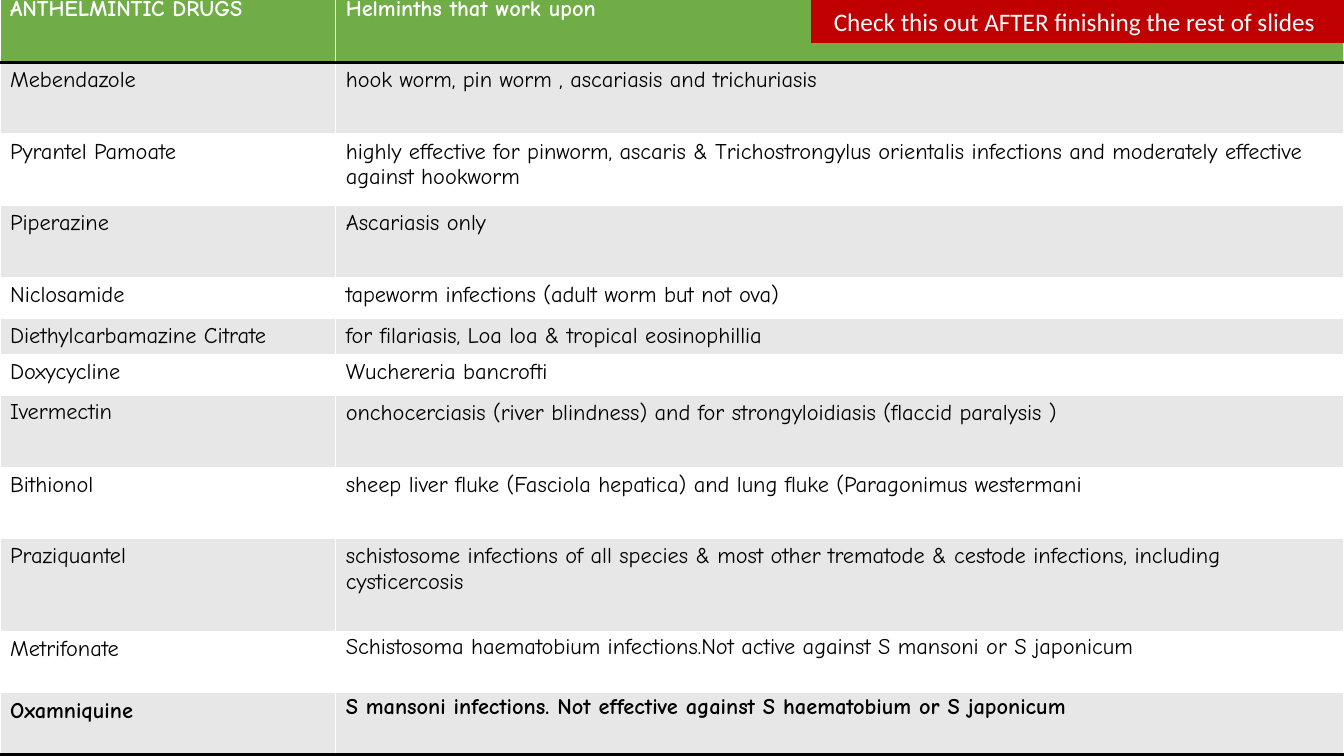
from lxml import etree
from pptx import Presentation
from pptx.dml.color import RGBColor
from pptx.enum import shapes, text
from pptx.oxml import ns
from pptx.util import Inches, Pt

COLORS = {
    "head": "70AD47",
    "band": "E7E7E7",
    "white": "FFFFFF",
    "black": "000000",
    "note": "C00000",
}
HEAD = ("ANTHELMINTIC DRUGS", "Helminths that work upon")
# Row height, drug, helminths, line spacing of each cell
DRUGS = [
    (0.71, "Mebendazole", "hook worm, pin worm , ascariasis and trichuriasis", 1, 1),
    (0.71, "Pyrantel Pamoate",
     "highly effective for pinworm, ascaris & Trichostrongylus orientalis "
     "infections and moderately effective against hookworm", 1, 1),
    (0.71, "Piperazine", "Ascariasis only", 1, 1),
    (0.41, "Niclosamide", "tapeworm infections (adult worm but not ova)", 1, 1),
    (0.34, "Diethylcarbamazine Citrate",
     "for filariasis, Loa loa & tropical eosinophillia", 1, 1),
    (0.41, "Doxycycline", "Wuchereria bancrofti ", 1, 1),
    (0.71, "Ivermectin",
     "onchocerciasis (river blindness) and for strongyloidiasis "
     "(flaccid paralysis )", 0.9, 1),
    (0.71, "Bithionol",
     "sheep liver fluke (Fasciola hepatica) and lung fluke "
     "(Paragonimus westermani ", 1, 1),
    (0.92, "Praziquantel",
     "schistosome infections of all species & most other trematode & cestode "
     "infections, including cysticercosis", 1, 1),
    (0.61, "Metrifonate",
     "Schistosoma haematobium infections.Not active against S mansoni "
     "or S japonicum", 1, 0.9),
    (0.61, "Oxamniquine",
     "S mansoni infections. Not effective against S haematobium "
     "or S japonicum", 1, 0.8),
]


def paint(item, color):
    item.fill.solid()
    item.fill.fore_color.rgb = RGBColor.from_string(COLORS[color])


def write(frame, words, size=16, font="Comic Neue", color="black",
          bold=False, align=None, lead=1):
    para = frame.paragraphs[0]
    para.alignment = align
    if lead != 1:
        para.line_spacing = lead
    run = para.add_run()
    run.text = words
    run.font.size = Pt(size)
    run.font.name = font
    run.font.bold = bold
    run.font.color.rgb = RGBColor.from_string(COLORS[color])


def rule(cell, sides):
    """Draw black borders on the given sides, T before B."""
    props = cell._tc.get_or_add_tcPr()
    for place, side in enumerate(sides):
        line = etree.Element(ns.qn(f"a:ln{side}"), w=str(Pt(2)))
        fill = etree.SubElement(line, ns.qn("a:solidFill"))
        etree.SubElement(fill, ns.qn("a:srgbClr"), val=COLORS["black"])
        props.insert(place, line)


def add_drugs(slide):
    rows = [(0.71, *HEAD, 1, 1)] + DRUGS
    last = len(rows) - 1
    total = sum(row[0] for row in rows)
    table = slide.shapes.add_table(
        len(rows), 2, Inches(0), Inches(-0.09), Inches(13.33), Inches(total)
    ).table
    for col, width in zip(table.columns, (3.33, 10)):
        col.width = Inches(width)
    for i, (height, drug, worms, *leads) in enumerate(rows):
        table.rows[i].height = Inches(height)
        fill = "head" if i == 0 else "band" if i % 2 else "white"
        for cell, words, lead in zip(table.rows[i].cells, (drug, worms), leads):
            paint(cell, fill)
            write(cell.text_frame, words, lead=lead, bold=i in (0, last),
                  color="white" if i == 0 else "black")
            rule(cell, {0: "TB", last: "B"}.get(i, ""))


def add_note(slide):
    note = slide.shapes.add_shape(
        shapes.MSO_SHAPE.FLOWCHART_PROCESS,
        Inches(8.04), Inches(0), Inches(5.29), Inches(0.43))
    note.shadow.inherit = False
    note.line.fill.background()
    paint(note, "note")
    frame = note.text_frame
    frame.word_wrap = True
    frame.vertical_anchor = text.MSO_ANCHOR.MIDDLE
    write(frame, "Check this out AFTER finishing the rest of slides ", size=18,
          font="Calibri", color="white", align=text.PP_ALIGN.CENTER)


def main():
    deck = Presentation()
    deck.slide_width, deck.slide_height = Inches(13.33), Inches(7.5)
    slide = deck.slides.add_slide(deck.slide_layouts[6])
    add_drugs(slide)
    add_note(slide)
    deck.save("out.pptx")


if __name__ == "__main__":
    main()
